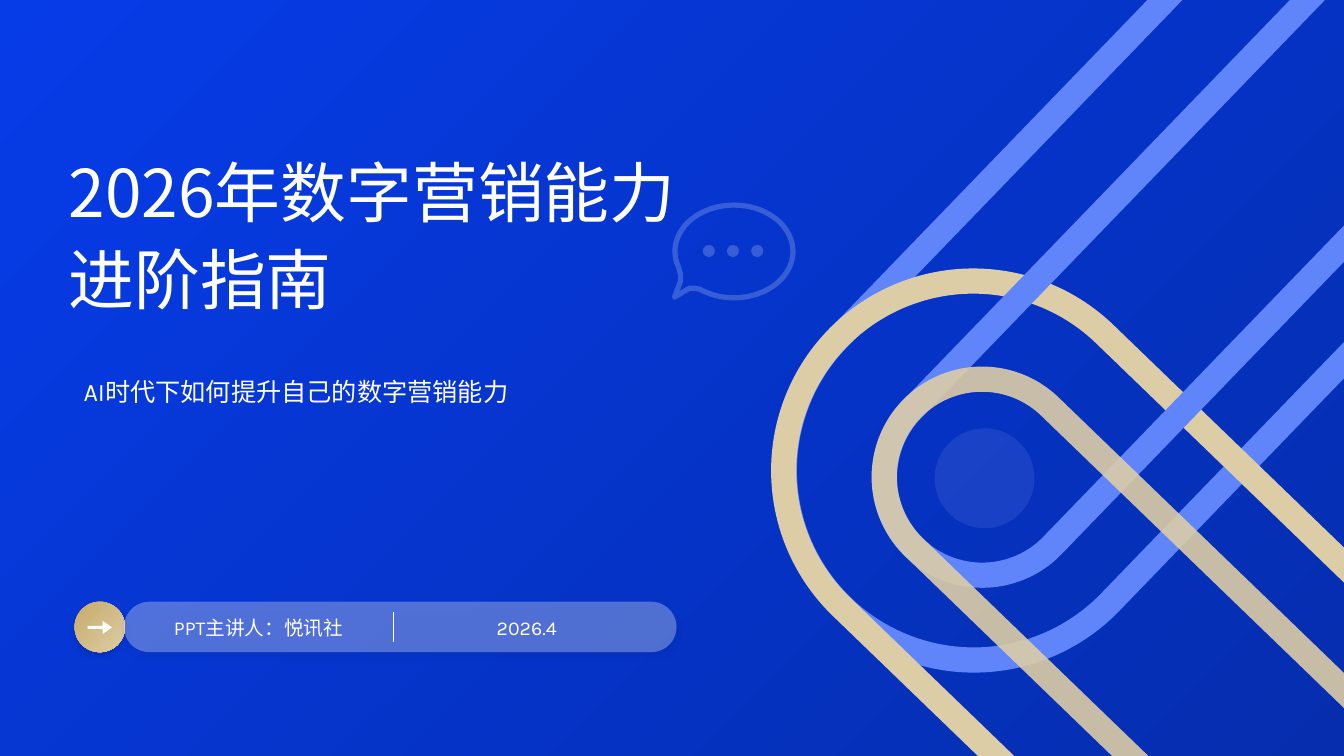
from dataclasses import dataclass
from math import cos, radians, sin

from lxml.etree import SubElement
from pptx import Presentation
from pptx.dml.color import RGBColor
from pptx.enum.shapes import MSO_CONNECTOR, MSO_SHAPE
from pptx.enum.text import MSO_ANCHOR, PP_ALIGN
from pptx.oxml.ns import qn
from pptx.shapes.autoshape import Shape
from pptx.util import Emu, Pt

WHITE, BLUE, GOLD, TAN, NAVY = "FFFFFF", "6085FB", "DDCDA6", "C6AB6A", "031E74"
Box = tuple[int, int, int, int]


@dataclass
class Band:
    box: Box
    turn: int
    color: str
    alpha: int = 100


@dataclass
class Solid:
    kind: MSO_SHAPE
    box: Box
    colors: tuple[str, ...]
    alpha: int = 100
    adjust: tuple[float, ...] = ()
    shade: bool = False


@dataclass
class Label:
    box: Box
    text: str
    size: int
    face: str = "Karla"
    align: PP_ALIGN = PP_ALIGN.LEFT
    space: float = 1.1
    inset: tuple[int, int] = (0, 0)


BANDS = [
    Band((979, -219, 376, 955), 224, BLUE),
    Band((923, 217, 376, 781), 314, GOLD),
    Band((1054, -61, 194, 703), 224, BLUE),
    Band((1014, 318, 194, 575), 314, GOLD, 90),
]
BACK = Solid(MSO_SHAPE.RECTANGLE, (0, 0, 1333, 750), ("063CE8", "052DAE"))
SOLIDS = [
    Solid(MSO_SHAPE.OVAL, (927, 425, 99, 99), ("CAD6FE",), 10),
    Solid(MSO_SHAPE.OVAL, (74, 597, 50, 50), (TAN, GOLD), shade=True),
    Solid(MSO_SHAPE.RIGHT_ARROW, (87, 616, 24, 13), (WHITE,), adjust=(0.24, 0.7)),
    Solid(MSO_SHAPE.ROUNDED_RECTANGLE, (123, 597, 548, 50), (WHITE,), 30, (0.5,), True),
]
DOTS = [Solid(MSO_SHAPE.OVAL, (697 + 24 * i, 243, 12, 12), (WHITE,), 20) for i in range(3)]
TAIL = [(694, 287), (689, 286), (684, 286), (677, 290), (669, 295),
        (672, 287), (675, 279), (675, 272), (673, 265)]
LABELS = [
    Label((153, 605, 207, 34), "PPT主讲人：悦讯社", 14, align=PP_ALIGN.CENTER),
    Label((419, 605, 207, 34), "2026.4", 14, align=PP_ALIGN.CENTER),
    Label((68, 111, 644, 236), "2026年数字营销能力进阶指南", 47, "Noto Sans CJK SC"),
    Label((73, 341, 482, 85), "AI时代下如何提升自己的数字营销能力", 18, space=1.3, inset=(10, 5)),
]


def px(size: float) -> Emu:
    return Emu(round(size * 9144))


def paint(color: str) -> RGBColor:
    return RGBColor.from_string(color)


def fade(shape: Shape, alpha: int) -> None:
    if alpha < 100:
        for node in shape._element.spPr.iter(qn("a:srgbClr")):
            SubElement(node, qn("a:alpha"), val=str(alpha * 1000))


def stroke(shape: Shape, color: str, width: float, alpha: int) -> None:
    shape.shadow.inherit = False
    shape.fill.background()
    shape.line.color.rgb = paint(color)
    shape.line.width = Pt(width)
    fade(shape, alpha)


def draw_band(slide, band: Band) -> None:
    shape = slide.shapes.add_shape(MSO_SHAPE.ROUND_2_SAME_RECTANGLE, *map(px, band.box))
    shape.adjustments[0] = 0.5
    shape.rotation = band.turn
    stroke(shape, band.color, 18, band.alpha)


def draw_solid(slide, item: Solid) -> None:
    shape = slide.shapes.add_shape(item.kind, *map(px, item.box))
    for i, value in enumerate(item.adjust):
        shape.adjustments[i] = value
    shape.shadow.inherit = False
    shape.line.fill.background()
    if len(item.colors) == 1:
        shape.fill.solid()
        shape.fill.fore_color.rgb = paint(item.colors[0])
    else:
        shape.fill.gradient()
        shape.fill.gradient_angle = 315
        for stop, color in zip(shape.fill.gradient_stops, item.colors):
            stop.color.rgb = paint(color)
        for stop, place in zip(shape.fill.gradient_stops, (0, 1)):
            stop.position = place
    fade(shape, item.alpha)
    if item.shade:
        effects = shape._element.spPr.find(qn("a:effectLst"))
        outer = SubElement(effects, qn("a:outerShdw"), blurRad=str(Pt(4)),
                           dist=str(Pt(3)), dir="5400000", rotWithShape="0")
        tint = SubElement(outer, qn("a:srgbClr"), val=NAVY)
        SubElement(tint, qn("a:alpha"), val="25000")


def draw_bubble(slide) -> None:
    arc = [(728 + 58.5 * cos(radians(a)), 249.5 + 46 * sin(radians(a)))
           for a in range(167, 480, 4)]
    points = [(px(x), px(y)) for x, y in arc + TAIL]
    pen = slide.shapes.build_freeform(*points[0], scale=1.0)
    pen.add_line_segments(points[1:], close=True)
    shape = pen.convert_to_shape()
    stroke(shape, WHITE, 3.75, 20)
    SubElement(shape.line._get_or_add_ln(), qn("a:round"))


def draw_rule(slide) -> None:
    rule = slide.shapes.add_connector(MSO_CONNECTOR.STRAIGHT, *map(px, (390, 607, 390, 637)))
    rule.line.color.rgb = paint(WHITE)
    rule.line.width = Pt(1)
    SubElement(rule._element.spPr, qn("a:effectLst"))


def draw_label(slide, label: Label) -> None:
    frame = slide.shapes.add_textbox(*map(px, label.box)).text_frame
    frame.word_wrap = True
    frame.vertical_anchor = MSO_ANCHOR.MIDDLE
    frame.margin_left = frame.margin_right = px(label.inset[0])
    frame.margin_top = frame.margin_bottom = px(label.inset[1])
    line = frame.paragraphs[0]
    line.text = label.text
    line.alignment = label.align
    line.line_spacing = label.space
    line.font.name = label.face
    line.font.size = Pt(label.size)
    line.font.color.rgb = paint(WHITE)


def main() -> None:
    """Build the cover slide and save it."""
    deck = Presentation()
    deck.slide_width, deck.slide_height = px(1333), px(750)
    slide = deck.slides.add_slide(deck.slide_layouts[6])
    draw_solid(slide, BACK)
    for band in BANDS:
        draw_band(slide, band)
    for item in SOLIDS + DOTS:
        draw_solid(slide, item)
    draw_bubble(slide)
    draw_rule(slide)
    for label in LABELS:
        draw_label(slide, label)
    deck.save("out.pptx")


if __name__ == "__main__":
    main()
